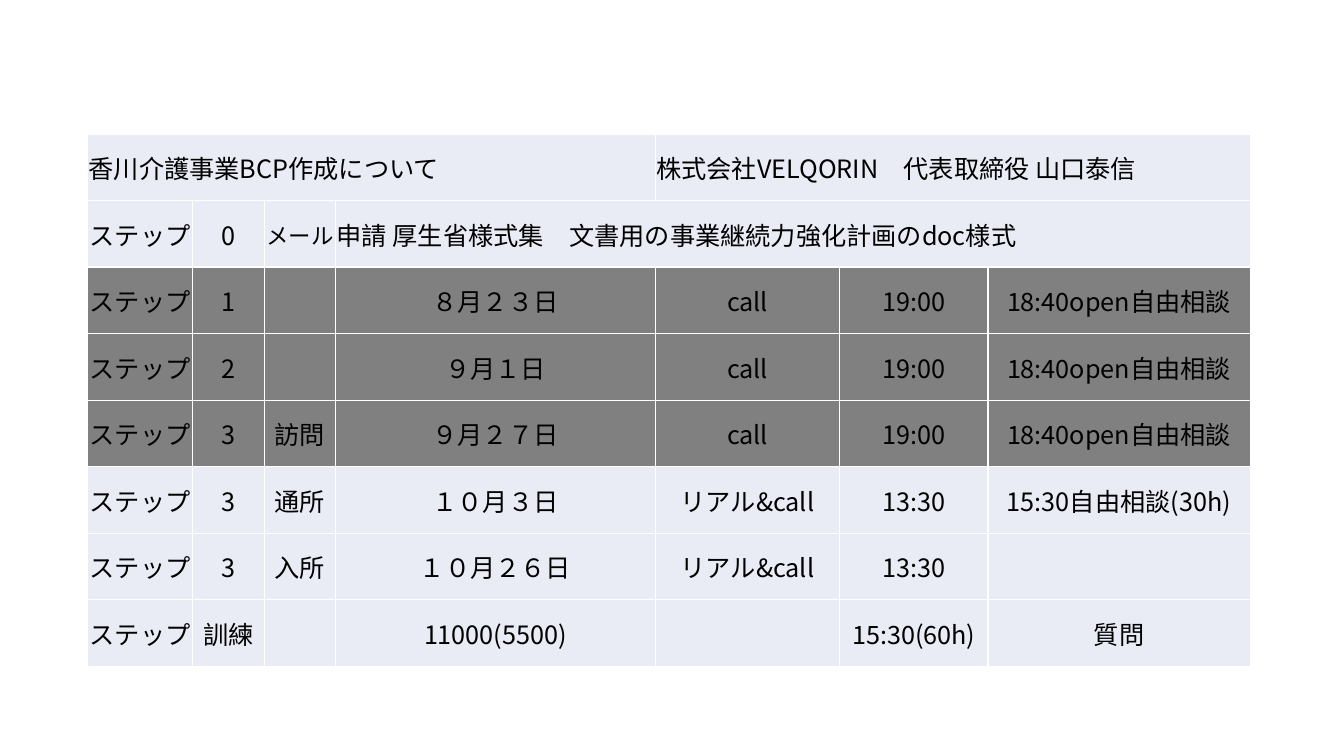
from typing import NamedTuple

from lxml import etree
from pptx import Presentation
from pptx.dml.color import RGBColor
from pptx.enum.text import MSO_ANCHOR, PP_ALIGN
from pptx.oxml.ns import qn
from pptx.util import Emu, Pt

PX = 9144  # 100 px to the inch
FONT = "Noto Sans CJK JP"
BLACK = RGBColor(0x00, 0x00, 0x00)
WHITE = RGBColor(0xFF, 0xFF, 0xFF)
PALE = RGBColor(0xE9, 0xEB, 0xF5)
GRAY = RGBColor(0x80, 0x80, 0x80)
LEFT, CENTER = PP_ALIGN.LEFT, PP_ALIGN.CENTER
MIDDLE = MSO_ANCHOR.MIDDLE

COLUMN_WIDTHS = (104, 71, 71, 317, 183, 147, 260)
ROW_HEIGHT = 66
TABLE_LEFT, TABLE_TOP = 87, 133


class Entry(NamedTuple):
    text: str
    span: int = 1
    size: int = 18


class Row(NamedTuple):
    entries: tuple[Entry, ...]
    fill: RGBColor = PALE


def step(*texts: str, fill: RGBColor = PALE) -> Row:
    return Row(tuple(Entry(text) for text in ("ステップ", *texts)), fill)


def online_step(number: str, service: str, date: str) -> Row:
    return step(number, service, date, "call", "19:00", "18:40open自由相談", fill=GRAY)


ROWS = (
    Row((
        Entry("香川介護事業BCP作成について", span=4),
        Entry("株式会社VELQORIN　代表取締役 山口泰信", span=3),
    )),
    Row((
        Entry("ステップ"),
        Entry("0"),
        Entry("メール", size=16),
        Entry("申請 厚生省様式集　文書用の事業継続力強化計画のdoc様式", span=4),
    )),
    online_step("1", "", "８月２３日"),
    online_step("2", "", "９月１日"),
    online_step("3", "訪問", "９月２７日"),
    step("3", "通所", "１０月３日", "リアル&call", "13:30", "15:30自由相談(30h)"),
    step("3", "入所", "１０月２６日", "リアル&call", "13:30", ""),
    step("訓練", "", "11000(5500)", "", "15:30(60h)", "質問"),
)


def px(length: int) -> Emu:
    return Emu(length * PX)


def write_text(cell, text: str, *, size: int, align: PP_ALIGN) -> None:
    cell.vertical_anchor = MIDDLE
    cell.margin_left = cell.margin_right = cell.margin_top = px(1)
    cell.margin_bottom = 0
    if not text:
        return
    paragraph = cell.text_frame.paragraphs[0]
    paragraph.alignment = align
    run = paragraph.add_run()
    run.text = text
    run.font.size = Pt(size)
    run.font.name = FONT
    run.font.color.rgb = BLACK
    # East Asian characters take their typeface from a separate element
    etree.SubElement(run.font._element, qn("a:ea"), typeface=FONT)


def style_cell(cell, fill: RGBColor) -> None:
    properties = cell._tc.get_or_add_tcPr()
    for side in ("lnL", "lnR", "lnT", "lnB"):
        line = etree.SubElement(properties, qn(f"a:{side}"), w=str(Pt(1)))
        solid = etree.SubElement(line, qn("a:solidFill"))
        etree.SubElement(solid, qn("a:srgbClr"), val=str(WHITE))
    cell.fill.solid()
    cell.fill.fore_color.rgb = fill


def add_schedule(slide) -> None:
    frame = slide.shapes.add_table(
        len(ROWS), len(COLUMN_WIDTHS), px(TABLE_LEFT), px(TABLE_TOP),
        px(sum(COLUMN_WIDTHS)), px(ROW_HEIGHT * len(ROWS)),
    )
    table = frame.table
    table.first_row = table.horz_banding = False
    for column, width in zip(table.columns, COLUMN_WIDTHS):
        column.width = px(width)

    for row_index, row in enumerate(ROWS):
        table.rows[row_index].height = px(ROW_HEIGHT)
        for column_index in range(len(COLUMN_WIDTHS)):
            style_cell(table.cell(row_index, column_index), row.fill)
        column_index = 0
        for entry in row.entries:
            cell = table.cell(row_index, column_index)
            column_index += entry.span
            if entry.span > 1:
                cell.merge(table.cell(row_index, column_index - 1))
            align = LEFT if entry.span > 1 else CENTER
            write_text(cell, entry.text, size=entry.size, align=align)


def main() -> None:
    presentation = Presentation()
    presentation.slide_width, presentation.slide_height = px(1333), px(750)
    slide = presentation.slides.add_slide(presentation.slide_layouts[6])
    # Schedule of the planning steps
    add_schedule(slide)
    presentation.save("out.pptx")


if __name__ == "__main__":
    main()
